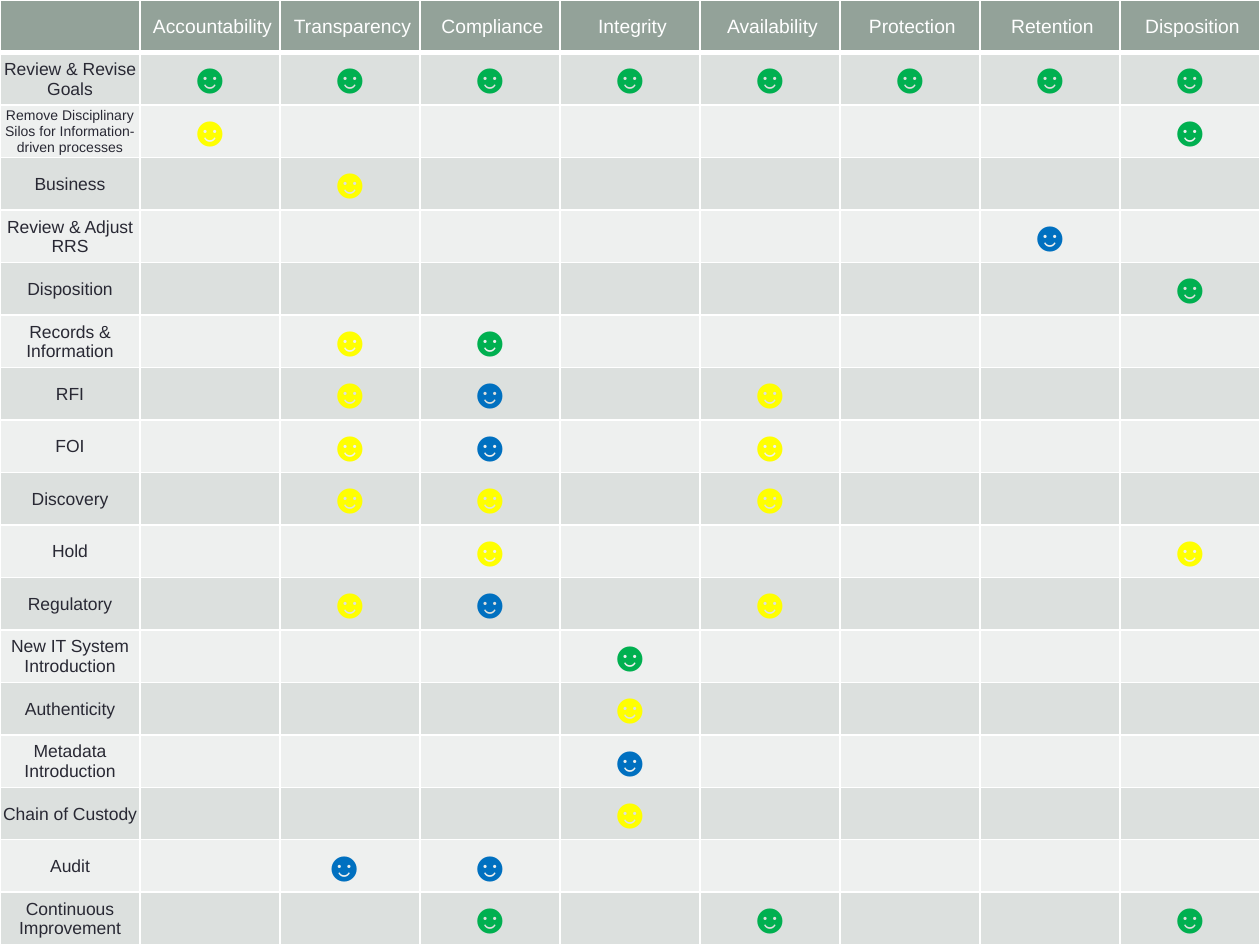
"""Build a slide with a matrix of activities against information governance principles."""
from lxml.etree import SubElement
from pptx import Presentation
from pptx.dml.color import RGBColor
from pptx.enum.text import MSO_ANCHOR, PP_ALIGN
from pptx.oxml import parse_xml
from pptx.oxml.ns import nsdecls, qn
from pptx.util import Inches, Pt

WHITE = RGBColor(0xFF, 0xFF, 0xFF)
INK = RGBColor(0x29, 0x29, 0x34)
HEADER_FILL = RGBColor(0x93, 0xA2, 0x99)
BAND_FILLS = (RGBColor(0xDC, 0xE0, 0xDE), RGBColor(0xEE, 0xF0, 0xEF))
MARK_COLORS = {
    "G": RGBColor(0x00, 0xB0, 0x50),
    "Y": RGBColor(0xFF, 0xFF, 0x00),
    "B": RGBColor(0x00, 0x70, 0xC0),
}
FACE = "☻"

PRINCIPLES = ["Accountability", "Transparency", "Compliance", "Integrity",
              "Availability", "Protection", "Retention", "Disposition"]
ACTIVITIES = [
    ("Review & Revise Goals", "GGGGGGGG"),
    ("Remove Disciplinary Silos for Information-driven processes", "Y......G"),
    ("Business", ".Y......"),
    ("Review & Adjust RRS", "......B."),
    ("Disposition", ".......G"),
    ("Records & Information", ".YG....."),
    ("RFI", ".YB.Y..."),
    ("FOI", ".YB.Y..."),
    ("Discovery", ".YY.Y..."),
    ("Hold", "..Y....Y"),
    ("Regulatory", ".YB.Y..."),
    ("New IT System Introduction", "...G...."),
    ("Authenticity", "...Y...."),
    ("Metadata Introduction", "...B...."),
    ("Chain of Custody", "...Y...."),
    ("Audit", ".BB....."),
    ("Continuous Improvement", "..G.G..G"),
]
LABEL_SIZES = {"Remove Disciplinary Silos for Information-driven processes": 8}
FACE_TEXTS = {("Audit", "Transparency"): "☻ "}


def add_borders(cell, bottom=1):
    """Draw white lines on the four sides of a cell."""
    properties = cell._tc.get_or_add_tcPr()
    sides = (("lnL", 1), ("lnR", 1), ("lnT", 1), ("lnB", bottom))
    for position, (side, width) in enumerate(sides):
        line = parse_xml(f'<a:{side} {nsdecls("a")} w="{Pt(width)}"/>')
        solid = SubElement(line, qn("a:solidFill"))
        SubElement(solid, qn("a:srgbClr"), val=str(WHITE))
        properties.insert(position, line)


def write_cell(cell, text, *, fill, size=10, color=INK, left=0.01, bottom=1):
    """Fill a cell and write its centred text."""
    cell.fill.solid()
    cell.fill.fore_color.rgb = fill
    add_borders(cell, bottom)
    cell.vertical_anchor = MSO_ANCHOR.MIDDLE
    cell.margin_left = Inches(left)
    cell.margin_top = cell.margin_right = Inches(0.01)
    cell.margin_bottom = 0
    paragraph = cell.text_frame.paragraphs[0]
    paragraph.alignment = PP_ALIGN.CENTER
    if text:
        run = paragraph.add_run()
        run.text = text
        run.font.name = "Arial"
        run.font.size = Pt(size)
        run.font.color.rgb = color


def main():
    prs = Presentation()
    prs.slide_width, prs.slide_height = Inches(10), Inches(7.5)
    slide = prs.slides.add_slide(prs.slide_layouts[6])
    matrix = slide.shapes.add_table(
        len(ACTIVITIES) + 1, len(PRINCIPLES) + 1,
        0, 0, prs.slide_width, prs.slide_height).table

    for column, principle in enumerate(["", *PRINCIPLES]):
        write_cell(matrix.cell(0, column), principle, fill=HEADER_FILL,
                   size=11, color=WHITE, left=0.05, bottom=3)

    for row, (activity, marks) in enumerate(ACTIVITIES, start=1):
        band = BAND_FILLS[(row - 1) % 2]
        write_cell(matrix.cell(row, 0), activity, fill=band,
                   size=LABEL_SIZES.get(activity, 10))
        for column, (principle, mark) in enumerate(zip(PRINCIPLES, marks), start=1):
            face = FACE_TEXTS.get((activity, principle), FACE)
            write_cell(matrix.cell(row, column), face if mark in MARK_COLORS else "",
                       fill=band, size=24, color=MARK_COLORS.get(mark, INK))

    prs.save("out.pptx")


if __name__ == "__main__":
    main()
